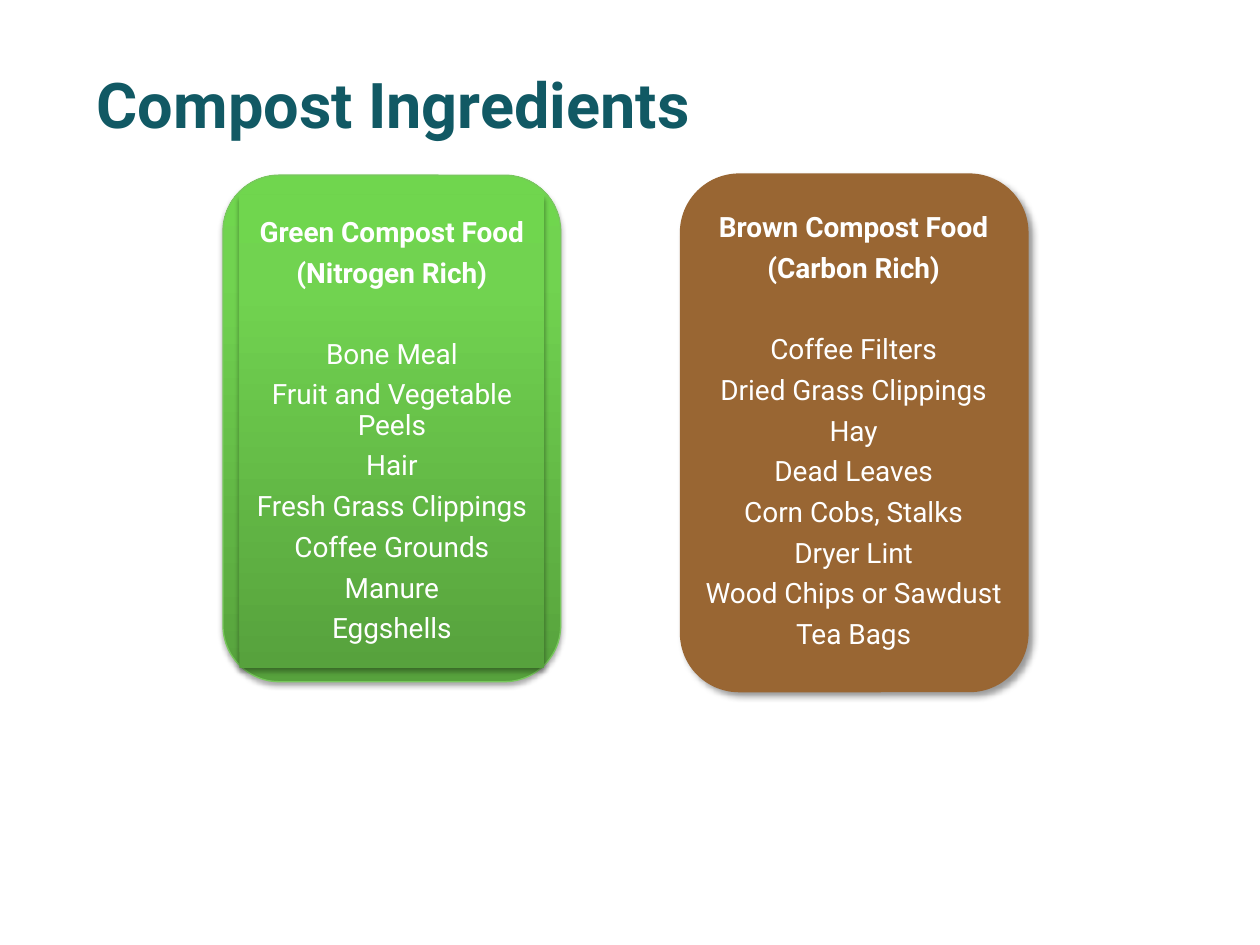
from dataclasses import dataclass
from typing import Optional

import pptx
import pptx.dml.color
import pptx.enum.shapes
import pptx.enum.text
import pptx.oxml
import pptx.oxml.ns
import pptx.util

COLUMNS, ROWS = 100, 75
CELL = pptx.util.Inches(0.1)
SHAPE = pptx.enum.shapes.MSO_SHAPE
ALIGN = pptx.enum.text.PP_ALIGN
MIDDLE = pptx.enum.text.MSO_ANCHOR.MIDDLE


@dataclass(frozen=True)
class Theme:
    font: str = "Roboto"
    title: str = "115964"
    text: str = "FFFFFF"
    green_line: str = "78C85D"
    green_stops: tuple = ((0, "57A23D"), (80, "71D350"), (100, "70D64E"))
    brown: str = "996633"
    title_size: int = 36
    body_size: int = 16
    line_spacing: float = 0.9
    item_gap: int = 6
    heading_gap: int = 29
    inset: float = 0.06


THEME = Theme()


@dataclass(frozen=True)
class Area:
    """A place on the grid, in columns and rows."""
    left: float
    top: float
    width: float
    height: float

    def lengths(self):
        return [round(n * CELL) for n in (self.left, self.top, self.width, self.height)]


@dataclass(frozen=True)
class Shadow:
    opacity: int
    blur: float
    distance: float
    angle: int


@dataclass(frozen=True)
class Plate:
    kind: SHAPE
    area: Area
    fill: object
    line: Optional[str] = None
    line_width: float = 0.75
    shadow: Optional[Shadow] = None


@dataclass(frozen=True)
class Card:
    back: Plate
    front: Plate
    heading: tuple
    items: tuple


SOFT = Shadow(35, 3.1, 1.8, 90)
CARDS = (
    Card(
        Plate(SHAPE.ROUNDED_RECTANGLE, Area(17.7, 13.9, 26.8, 40.2),
              THEME.green_stops, THEME.green_line, shadow=SOFT),
        Plate(SHAPE.RECTANGLE, Area(19, 15.5, 24.2, 37.5), THEME.green_stops, shadow=SOFT),
        ("Green Compost Food", "(Nitrogen Rich)"),
        ("Bone Meal", "Fruit and Vegetable Peels", "Hair", "Fresh Grass Clippings",
         "Coffee Grounds", "Manure", "Eggshells"),
    ),
    Card(
        Plate(SHAPE.ROUNDED_RECTANGLE, Area(54.1, 13.9, 27.4, 40.9),
              THEME.brown, THEME.brown, 2, Shadow(40, 4, 3, 45)),
        Plate(SHAPE.RECTANGLE, Area(55.4, 15.2, 24.7, 38.2), THEME.brown, THEME.brown),
        ("Brown Compost Food", "(Carbon Rich)"),
        ("Coffee Filters", "Dried Grass Clippings", "Hay", "Dead Leaves",
         "Corn Cobs, Stalks", "Dryer Lint", "Wood Chips or Sawdust", "Tea Bags"),
    ),
)


def rgb(color: str):
    return pptx.dml.color.RGBColor.from_string(color)


def element(markup: str):
    return pptx.oxml.parse_xml(markup.replace(" ", f" {pptx.oxml.ns.nsdecls('a')} ", 1))


def write(frame, text: str, *, size: int, color: str, bold=False,
          align=ALIGN.LEFT, spacing=1.0, after=0):
    """Fill the frame's first paragraph, or add one below the text already there."""
    para = frame.add_paragraph() if frame.text else frame.paragraphs[0]
    para.alignment, para.line_spacing = align, spacing
    para.space_after = pptx.util.Pt(after)
    span = para.add_run()
    span.text = text
    span.font.name, span.font.size = THEME.font, pptx.util.Pt(size)
    span.font.bold, span.font.color.rgb = bold, rgb(color)


def fill_gradient(shape, stops: tuple):
    """Run the stops from the bottom edge to the top edge."""
    shape.fill.gradient()
    shape.fill.gradient_angle = 90
    stop_list = next(shape.element.iter(pptx.oxml.ns.qn("a:gsLst")))
    for stop in list(stop_list):
        stop_list.remove(stop)
    for position, color in stops:
        stop_list.append(element(
            f'<a:gs pos="{position * 1000}"><a:srgbClr val="{color}"/></a:gs>'))


def cast_shadow(shape, shadow: Shadow):
    effects = next(shape.element.iter(pptx.oxml.ns.qn("a:effectLst")))
    effects.append(element(
        f'<a:outerShdw blurRad="{pptx.util.Pt(shadow.blur)}" '
        f'dist="{pptx.util.Pt(shadow.distance)}" dir="{shadow.angle * 60000}" '
        f'rotWithShape="0"><a:srgbClr val="000000">'
        f'<a:alpha val="{shadow.opacity * 1000}"/></a:srgbClr></a:outerShdw>'))


def draw_plate(shapes, plate: Plate):
    shape = shapes.add_shape(plate.kind, *plate.area.lengths())
    shape.shadow.inherit = False
    if isinstance(plate.fill, str):
        shape.fill.solid()
        shape.fill.fore_color.rgb = rgb(plate.fill)
    else:
        fill_gradient(shape, plate.fill)
    if plate.line:
        shape.line.color.rgb = rgb(plate.line)
        shape.line.width = pptx.util.Pt(plate.line_width)
    else:
        shape.line.fill.background()
    if plate.shadow:
        cast_shadow(shape, plate.shadow)
    return shape


def draw_card(page, card: Card):
    group = page.shapes.add_group_shape()
    draw_plate(group.shapes, card.back)
    frame = draw_plate(group.shapes, card.front).text_frame
    frame.word_wrap, frame.vertical_anchor = True, MIDDLE
    inset = pptx.util.Inches(THEME.inset)
    frame.margin_left = frame.margin_right = inset
    frame.margin_top = frame.margin_bottom = inset
    for text in card.heading + card.items:
        last_heading = text == card.heading[-1]
        write(frame, text, size=THEME.body_size, color=THEME.text,
              bold=text in card.heading, align=ALIGN.CENTER, spacing=THEME.line_spacing,
              after=THEME.heading_gap if last_heading else THEME.item_gap)


def draw_title(page, text: str, area: Area):
    frame = page.shapes.add_textbox(*area.lengths()).text_frame
    frame.word_wrap, frame.vertical_anchor = True, MIDDLE
    write(frame, text, size=THEME.title_size, color=THEME.title, bold=True)


def main():
    deck = pptx.Presentation()
    deck.slide_width, deck.slide_height = COLUMNS * CELL, ROWS * CELL
    page = deck.slides.add_slide(deck.slide_layouts[6])
    draw_title(page, "Compost Ingredients", Area(6.7, 4.7, 90, 7))
    for card in CARDS:
        draw_card(page, card)
    deck.save("out.pptx")


if __name__ == "__main__":
    main()
